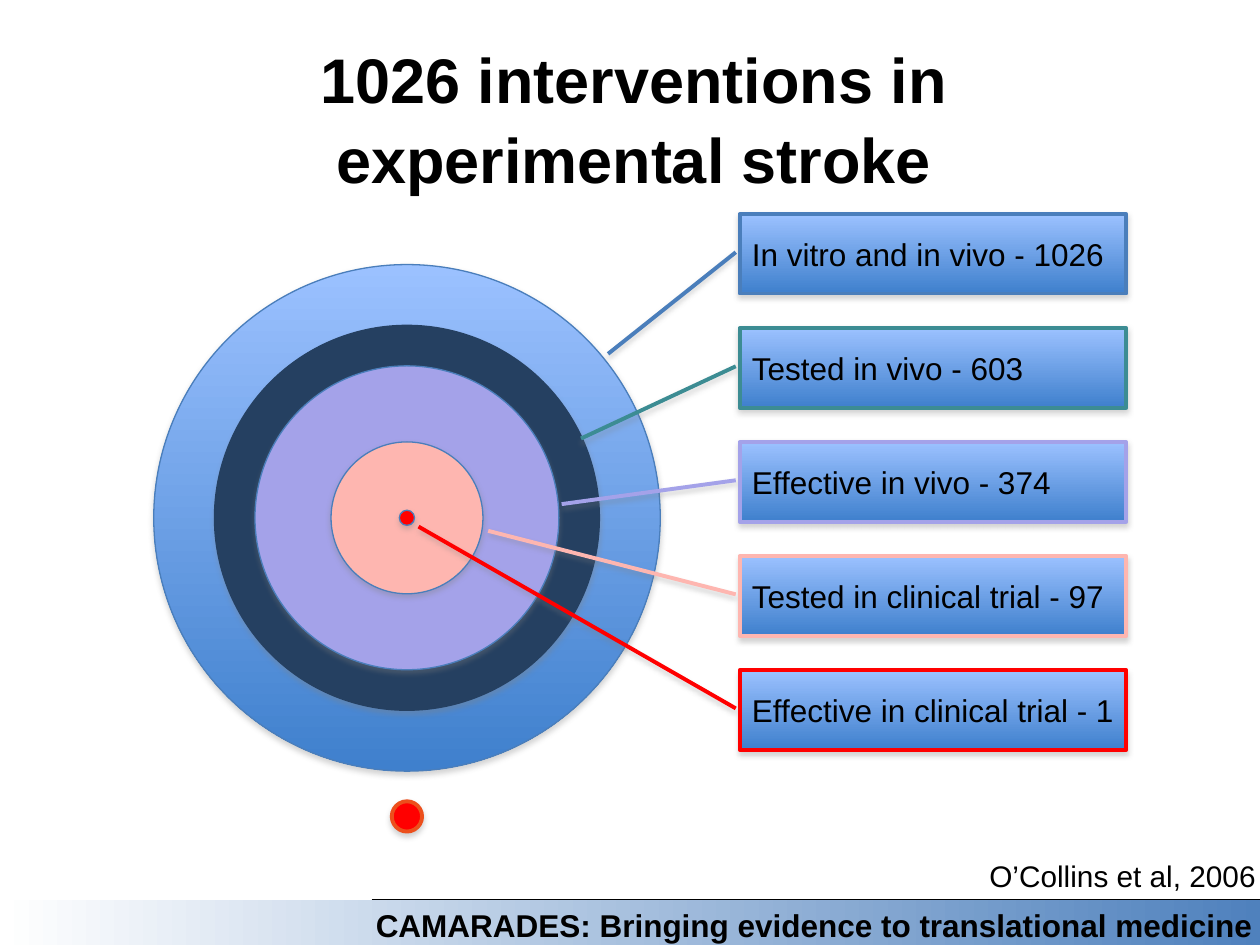
from lxml import etree
from pptx import Presentation, util as u
from pptx.dml.color import RGBColor
from pptx.enum import shapes, text
from pptx.oxml.ns import qn

# Grid of square cells: 100 columns by 75 rows
COLS, ROWS = 100, 75
CELL = u.Inches(0.1)
HUES = {
    "ink": "000000", "white": "FFFFFF", "foot": "4F81BD",
    "pale": "9BC1FF", "deep": "3F80CD", "edge": "4A7EBB",
    "navy": "254061", "teal": "3C8C93", "lilac": "A4A2E9",
    "pink": "FEB6B0", "red": "FF0000", "flame": "EC4F1C", "shade": "808080",
}
KIND = shapes.MSO_SHAPE


def hue(name):
    return RGBColor.from_string(HUES[name])


def cells(*nums):
    return [round(n * CELL) for n in nums]


def paint(fill, look, angle=270):
    """Fill with one colour, or with a gradient between a pair."""
    if isinstance(look, str):
        fill.solid()
        fill.fore_color.rgb = hue(look)
        return
    fill.gradient()
    fill.gradient_angle = angle
    for stop, name in zip(fill.gradient_stops, look):
        stop.color.rgb = hue(name)


def shade(shape):
    """Give the shape a soft shadow below it."""
    shape.shadow.inherit = False
    glow = shape._element.spPr.find(qn("a:effectLst"))
    cast = etree.SubElement(glow, qn("a:outerShdw"), blurRad=str(u.Pt(3.1)),
                            dist=str(u.Pt(1.8)), dir="5400000", rotWithShape="0")
    tint = etree.SubElement(cast, qn("a:srgbClr"), val=HUES["shade"])
    etree.SubElement(tint, qn("a:alpha"), val="35000")


def draw(slide, kind, box, look, line, width=0.75):
    shape = slide.shapes.add_shape(kind, *cells(*box))
    paint(shape.fill, look)
    shape.line.color.rgb = hue(line)
    shape.line.width = u.Pt(width)
    shade(shape)
    return shape


def write(shape, words, size, align, bold=False, indent=0):
    frame = shape.text_frame
    frame.word_wrap = True
    para = frame.paragraphs[0]
    para.alignment = align
    if indent:
        para._p.get_or_add_pPr().set("marL", str(u.Inches(indent)))
    run = para.add_run()
    run.text = words
    run.font.name, run.font.size, run.font.bold = "Arial", u.Pt(size), bold
    run.font.color.rgb = hue("ink")
    return frame


def label(slide, box, words, size, align, **more):
    """Place a text box without inner margins."""
    frame = write(slide.shapes.add_textbox(*cells(*box)), words, size, align, **more)
    frame.margin_left = frame.margin_right = frame.margin_top = frame.margin_bottom = 0
    return frame


def footer(slide, box):
    left, top, wide, high = box
    band = slide.shapes.add_shape(KIND.RECTANGLE, *cells(*box))
    paint(band.fill, ("white", "foot"), 0)
    band.line.fill.background()
    band.shadow.inherit = False
    motto = slide.shapes.add_textbox(*cells(left + 28, top, wide - 27.6, 4))
    write(motto, "CAMARADES: Bringing evidence to translational medicine", 18,
          text.PP_ALIGN.RIGHT, bold=True)
    rule = slide.shapes.add_connector(shapes.MSO_CONNECTOR.STRAIGHT,
                                      *cells(left + 29.5, top, left + wide, top))
    rule.line.color.rgb = hue("ink")
    rule.line.width = u.Pt(0.75)
    etree.SubElement(rule._element.spPr, qn("a:effectLst"))


def target(slide, box):
    """Concentric rings, sized as shares of the outer one, and a dot below."""
    left, top, wide, high = box
    mid, axis = left + wide / 2, top + high / 2
    rings = [(1, ("pale", "deep"), "edge"), (0.76, "navy", "navy"),
             (0.6, "lilac", "edge"), (0.3, "pink", "edge"), (0.03, "red", "edge")]
    for share, look, line in rings:
        size = wide * share
        draw(slide, KIND.OVAL, (mid - size / 2, axis - size / 2, size, size), look, line)
    dot = 2.4
    draw(slide, KIND.OVAL, (mid - dot / 2, top + high + 2.4, dot, dot),
         "red", "flame", 2.25)


def callouts(slide, box):
    """Equal rows of labels; each pointer tip is in shares of its label."""
    left, top, wide, high = box
    rows = [("In vitro and in vivo - 1026", "edge", 1.76, -0.34),
            ("Tested in vivo - 603", "teal", 1.39, -0.41),
            ("Effective in vivo - 374", "lilac", 0.78, -0.46),
            ("Tested in clinical trial - 97", "pink", -0.32, -0.65),
            ("Effective in clinical trial - 1", "red", -1.81, -0.83)]
    tall = 6.3
    step = (high - tall) / (len(rows) - 1)
    for i, (words, line, tip_y, tip_x) in enumerate(rows):
        note = draw(slide, KIND.LINE_CALLOUT_1, (left, top + i * step, wide, tall),
                    ("pale", "deep"), line, 2.25)
        for j, share in enumerate((0.48, -0.01, tip_y, tip_x)):
            note.adjustments[j] = share
        frame = write(note, words, 18, text.PP_ALIGN.LEFT)
        frame.vertical_anchor = text.MSO_ANCHOR.MIDDLE


def main():
    deck = Presentation()
    deck.slide_width, deck.slide_height = cells(COLS, ROWS)
    slide = deck.slides.add_slide(deck.slide_layouts[6])

    footer(slide, (0, 71.4, COLS, 3.6))

    # Title and source
    title = label(slide, (13, 0.7, 74, 17.1), "1026 interventions in experimental stroke",
                  36, text.PP_ALIGN.CENTER, bold=True, indent=0.06)
    title.vertical_anchor = text.MSO_ANCHOR.MIDDLE
    title.paragraphs[0].line_spacing = 1.05
    label(slide, (72.1, 68.1, 27.6, 3.5), "O’Collins et al, 2006", 17,
          text.PP_ALIGN.RIGHT, indent=0.04)

    # Diagram
    target(slide, (12.2, 21, 40.2, 40.2))
    callouts(slide, (58.7, 17, 30.7, 42.5))
    deck.save("out.pptx")


if __name__ == "__main__":
    main()
